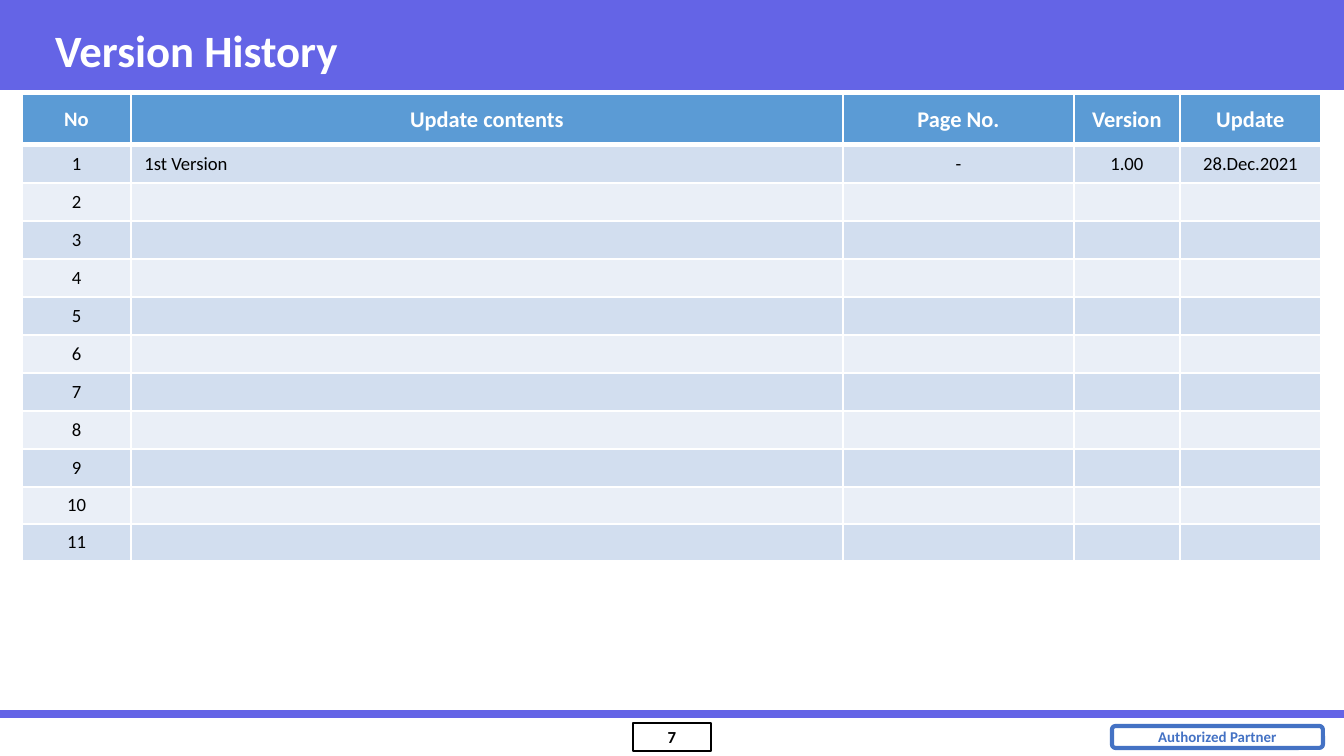
from lxml import etree
from pptx import Presentation
from pptx import util as u
from pptx.dml.color import RGBColor
from pptx.enum import shapes, text
from pptx.oxml.ns import qn

PX = 914400 / 134.4
FONT = "Calibri"
VIOLET, BLUE, WHITE, BLACK = "6464E6", "4472C4", "FFFFFF", "000000"
HEADER_FILL, ROW_FILLS = "5B9BD5", ("D2DEEF", "EAEFF7")
LEFT, CENTER = text.PP_ALIGN.LEFT, text.PP_ALIGN.CENTER

COLUMNS = [("No", 109, 11), ("Update contents", 712, 12), ("Page No.", 231, 12),
           ("Version", 106, 12), ("Update", 141, 12)]
FIRST_ENTRY = ["1", "1st Version", "-", "1.00", "28.Dec.2021"]
ENTRY_COUNT = 11
HEADER_HEIGHT = 51
ROW_HEIGHTS = [38] * 9 + [37] * 2


def px(length):
    return u.Emu(round(length * PX))


def color(code):
    return RGBColor.from_string(code)


def write(frame, words, size, fill=BLACK, bold=False, align=CENTER):
    paragraph = frame.paragraphs[0]
    paragraph.alignment = align
    if not words:
        # The end mark sets the line height of an empty cell
        paragraph._p.get_or_add_endParaRPr().set("sz", str(size * 100))
        return
    run = paragraph.add_run()
    run.text = words
    run.font.name = FONT
    run.font.size = u.Pt(size)
    run.font.bold = bold
    run.font.color.rgb = color(fill)


def add_box(slide, kind, left, top, width, height, fill=None, line=None, weight=1):
    box = slide.shapes.add_shape(kind, px(left), px(top), px(width), px(height))
    box.shadow.inherit = False
    if fill:
        box.fill.solid()
        box.fill.fore_color.rgb = color(fill)
    else:
        box.fill.background()
    if line:
        box.line.color.rgb = color(line)
        box.line.width = u.Pt(weight)
    else:
        box.line.fill.background()
    box.text_frame.vertical_anchor = text.MSO_ANCHOR.MIDDLE
    return box


def add_rule(slide, y, width, line, weight):
    rule = slide.shapes.add_connector(
        shapes.MSO_CONNECTOR.STRAIGHT, px(0), px(y), px(width), px(y))
    rule.line.color.rgb = color(line)
    rule.line.width = u.Pt(weight)
    etree.SubElement(rule._element.spPr, qn("a:effectLst"))


def set_borders(cell, top, bottom):
    """Draw white cell borders; top and bottom are weights in points."""
    properties = cell._tc.get_or_add_tcPr()
    weights = {"a:lnL": 1, "a:lnR": 1, "a:lnT": top, "a:lnB": bottom}
    for position, (tag, weight) in enumerate(weights.items()):
        border = etree.Element(qn(tag), w=str(u.Pt(weight)))
        solid = etree.SubElement(border, qn("a:solidFill"))
        etree.SubElement(solid, qn("a:srgbClr"), val=WHITE)
        properties.insert(position, border)


def style_cell(cell, fill, top=1, bottom=1):
    cell.fill.solid()
    cell.fill.fore_color.rgb = color(fill)
    cell.vertical_anchor = text.MSO_ANCHOR.MIDDLE
    set_borders(cell, top, bottom)


def add_history(slide, left, top):
    heights = [HEADER_HEIGHT] + ROW_HEIGHTS
    width = sum(column[1] for column in COLUMNS)
    history = slide.shapes.add_table(
        len(heights), len(COLUMNS), px(left), px(top), px(width), px(sum(heights))).table
    for row, height in zip(history.rows, heights):
        row.height = px(height)
    for index, (heading, column_width, size) in enumerate(COLUMNS):
        history.columns[index].width = px(column_width)
        cell = history.cell(0, index)
        style_cell(cell, HEADER_FILL, bottom=3)
        write(cell.text_frame, heading, size, WHITE, bold=True)

    blank = [""] * (len(COLUMNS) - 1)
    entries = [FIRST_ENTRY] + [[str(n)] + blank for n in range(2, ENTRY_COUNT + 1)]
    for number, entry in enumerate(entries, 1):
        for index, words in enumerate(entry):
            cell = history.cell(number, index)
            style_cell(cell, ROW_FILLS[(number - 1) % 2], top=3 if number == 1 else 1)
            write(cell.text_frame, words, 10, align=LEFT if index == 1 else CENTER)


def add_title(slide, words):
    title = slide.shapes.add_textbox(px(42), px(11), px(1244), px(78)).text_frame
    title.word_wrap = True
    title.vertical_anchor = text.MSO_ANCHOR.MIDDLE
    write(title, words, 24, WHITE, bold=True, align=LEFT)


def add_footer(slide):
    page = add_box(slide, shapes.MSO_SHAPE.RECTANGLE, 633, 723, 78, 28, line=BLACK).text_frame
    page.margin_left = page.margin_right = page.margin_top = page.margin_bottom = px(4)
    write(page, "7", 9, bold=True)
    add_rule(slide, 714, 1344, VIOLET, 4.5)
    badge = add_box(slide, shapes.MSO_SHAPE.ROUNDED_RECTANGLE, 1112, 726, 211, 22,
                    line=BLUE, weight=2.25)
    badge.text_frame.word_wrap = False
    write(badge.text_frame, "Authorized Partner", 8, BLUE, bold=True)


def main():
    deck = Presentation()
    deck.slide_width, deck.slide_height = px(1344), px(756)
    slide = deck.slides.add_slide(deck.slide_layouts[6])
    add_box(slide, shapes.MSO_SHAPE.RECTANGLE, 0, 0, 1344, 90, fill=VIOLET)
    add_footer(slide)
    add_title(slide, "Version History")
    add_history(slide, 22, 94)
    deck.save("out.pptx")


if __name__ == "__main__":
    main()
